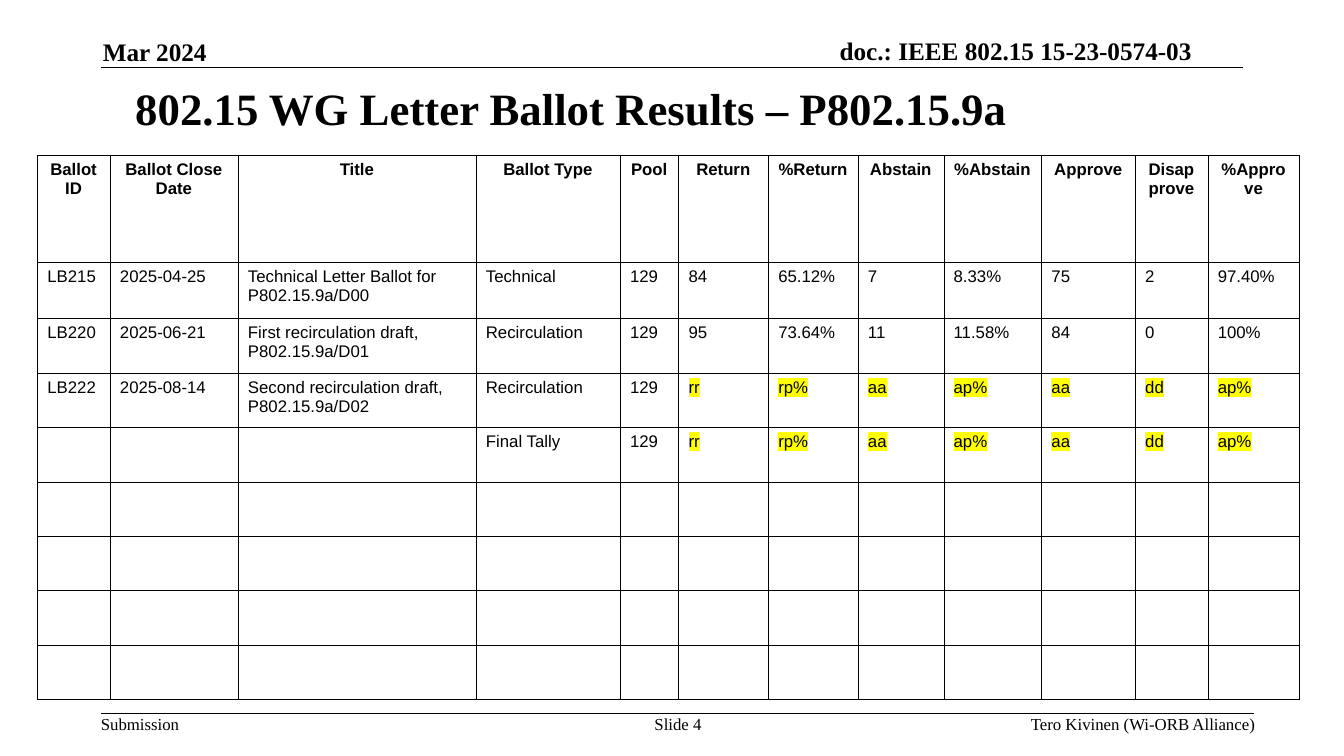
from lxml import etree
from pptx import Presentation
from pptx import util as u
from pptx.dml.color import RGBColor
from pptx.enum import shapes, text
from pptx.oxml.ns import qn

BLACK = RGBColor(0x00, 0x00, 0x00)
YELLOW = RGBColor(0xFF, 0xFF, 0x00)
LEFT, CENTER, RIGHT = text.PP_ALIGN.LEFT, text.PP_ALIGN.CENTER, text.PP_ALIGN.RIGHT
TOP, MIDDLE, BOTTOM = text.MSO_ANCHOR.TOP, text.MSO_ANCHOR.MIDDLE, text.MSO_ANCHOR.BOTTOM

SERIF = "Times New Roman"
HEADER = {"name": SERIF, "size": u.Pt(18), "bold": True}
FOOTER = {"name": SERIF, "size": u.Pt(12), "bold": False}
TITLE = {"name": SERIF, "size": u.Pt(32), "bold": True}
TABLE_HEAD = {"name": "Arial", "size": u.Pt(12), "bold": True}
TABLE_BODY = {**TABLE_HEAD, "bold": False}

COLUMNS = [0.72, 1.27, 2.36, 1.43, 0.58, 0.89, 0.89, 0.85, 0.97, 0.93, 0.72, 0.91]
ROWS = [1.06, 0.56] + [0.54] * 7
HEADINGS = ["Ballot ID", "Ballot Close Date", "Title", "Ballot Type", "Pool", "Return",
            "%Return", "Abstain", "%Abstain", "Approve", "Disapprove", "%Approve"]
PENDING = ["rr", "rp%", "aa", "ap%", "aa", "dd", "ap%"]
BALLOTS = [
    ["LB215", "2025-04-25", "Technical Letter Ballot for P802.15.9a/D00", "Technical",
     "129", "84", "65.12%", "7", "8.33%", "75", "2", "97.40%"],
    ["LB220", "2025-06-21", "First recirculation draft, P802.15.9a/D01", "Recirculation",
     "129", "95", "73.64%", "11", "11.58%", "84", "0", "100%"],
    ["LB222", "2025-08-14", "Second recirculation draft, P802.15.9a/D02", "Recirculation",
     "129"] + PENDING,
    ["", "", "", "Final Tally", "129"] + PENDING,
]


class BallotSlide:
    def __init__(self, prs):
        self.color = BLACK
        self.border = u.Pt(0.06)
        self.slide = prs.slides.add_slide(prs.slide_layouts[5])

    def add_text(self, p, words, font, align):
        p.alignment = align
        r = p.add_run()
        r.text = words
        for key, value in font.items():
            setattr(r.font, key, value)
        r.font.color.rgb = self.color
        return r

    def highlight(self, r, color):
        mark = etree.Element(qn("a:highlight"))
        etree.SubElement(mark, qn("a:srgbClr")).set("val", str(color))
        r.font._element.find(qn("a:solidFill")).addnext(mark)

    def title(self, words, box):
        sp = self.slide.shapes.title
        for key, value in zip(("left", "top", "width", "height"), box):
            setattr(sp, key, u.Inches(value))
        tf = sp.text_frame
        tf.auto_size = text.MSO_AUTO_SIZE.NONE
        tf.vertical_anchor = MIDDLE
        self.add_text(tf.paragraphs[0], words, TITLE, CENTER)

    def label(self, words, box, font, align=LEFT, anchor=TOP, wrap=True):
        sp = self.slide.shapes.add_textbox(*map(u.Inches, box))
        tf = sp.text_frame
        style = {"margin_left": 0, "margin_right": 0, "margin_top": 0, "margin_bottom": 0,
                 "word_wrap": wrap, "vertical_anchor": anchor}
        for key, value in style.items():
            setattr(tf, key, value)
        self.add_text(tf.paragraphs[0], words, font, align)

    def rule(self, x1, x2, y):
        line = self.slide.shapes.add_connector(
            shapes.MSO_CONNECTOR.STRAIGHT, *map(u.Inches, (x1, y, x2, y)))
        line.line.color.rgb = self.color
        line.line.width = u.Pt(1)
        etree.SubElement(line._element.spPr, qn("a:effectLst"))

    def outline(self, cell):
        cell.fill.background()
        tcPr = cell._tc.get_or_add_tcPr()
        for i, side in enumerate(("a:lnL", "a:lnR", "a:lnT", "a:lnB")):
            ln = etree.Element(qn(side), w=str(self.border))
            fill = etree.SubElement(ln, qn("a:solidFill"))
            etree.SubElement(fill, qn("a:srgbClr")).set("val", str(self.color))
            tcPr.insert(i, ln)

    def table(self, left, top, columns, rows, content):
        frame = self.slide.shapes.add_table(
            len(rows), len(columns), *map(u.Inches, (left, top, sum(columns), sum(rows))))
        table = frame.table
        table.first_row = table.horz_banding = False
        for column, width in zip(table.columns, columns):
            column.width = u.Inches(width)
        for row, height in zip(table.rows, rows):
            row.height = u.Inches(height)
        for cell in table.iter_cells():
            self.outline(cell)
        for i, line in enumerate(content):
            font, align = (TABLE_BODY, LEFT) if i else (TABLE_HEAD, CENTER)
            pending = line[-len(PENDING):] == PENDING
            for j, words in enumerate(line):
                if words:
                    p = table.cell(i, j).text_frame.paragraphs[0]
                    r = self.add_text(p, words, font, align)
                    if pending and j >= len(line) - len(PENDING):
                        self.highlight(r, YELLOW)


def main():
    prs = Presentation()
    prs.slide_width, prs.slide_height = u.Inches(13.33), u.Inches(7.5)
    s = BallotSlide(prs)
    s.rule(1, 12.33, 0.67)
    s.rule(1, 12.44, 7.08)
    s.label("Submission", (1, 7.08, 0.78, 0.2), FOOTER, wrap=False)
    s.label("doc.: IEEE 802.15 15-23-0574-03", (6.72, 0.35, 5.1, 0.3), HEADER, RIGHT, BOTTOM)
    s.label("Mar 2024", (1.02, 0.36, 2.73, 0.3), HEADER, LEFT, BOTTOM)
    s.label("Tero Kivinen (Wi-ORB Alliance)", (7.81, 7.08, 4.64, 0.2), FOOTER, RIGHT)
    s.label("Slide 4", (6.34, 7.08, 0.77, 0.39), FOOTER, CENTER)
    s.title("802.15 WG Letter Ballot Results – P802.15.9a", (0, 0.75, 11.33, 0.63))
    s.table(0.37, 1.54, COLUMNS, ROWS, [HEADINGS] + BALLOTS)
    prs.save("out.pptx")


if __name__ == "__main__":
    main()
